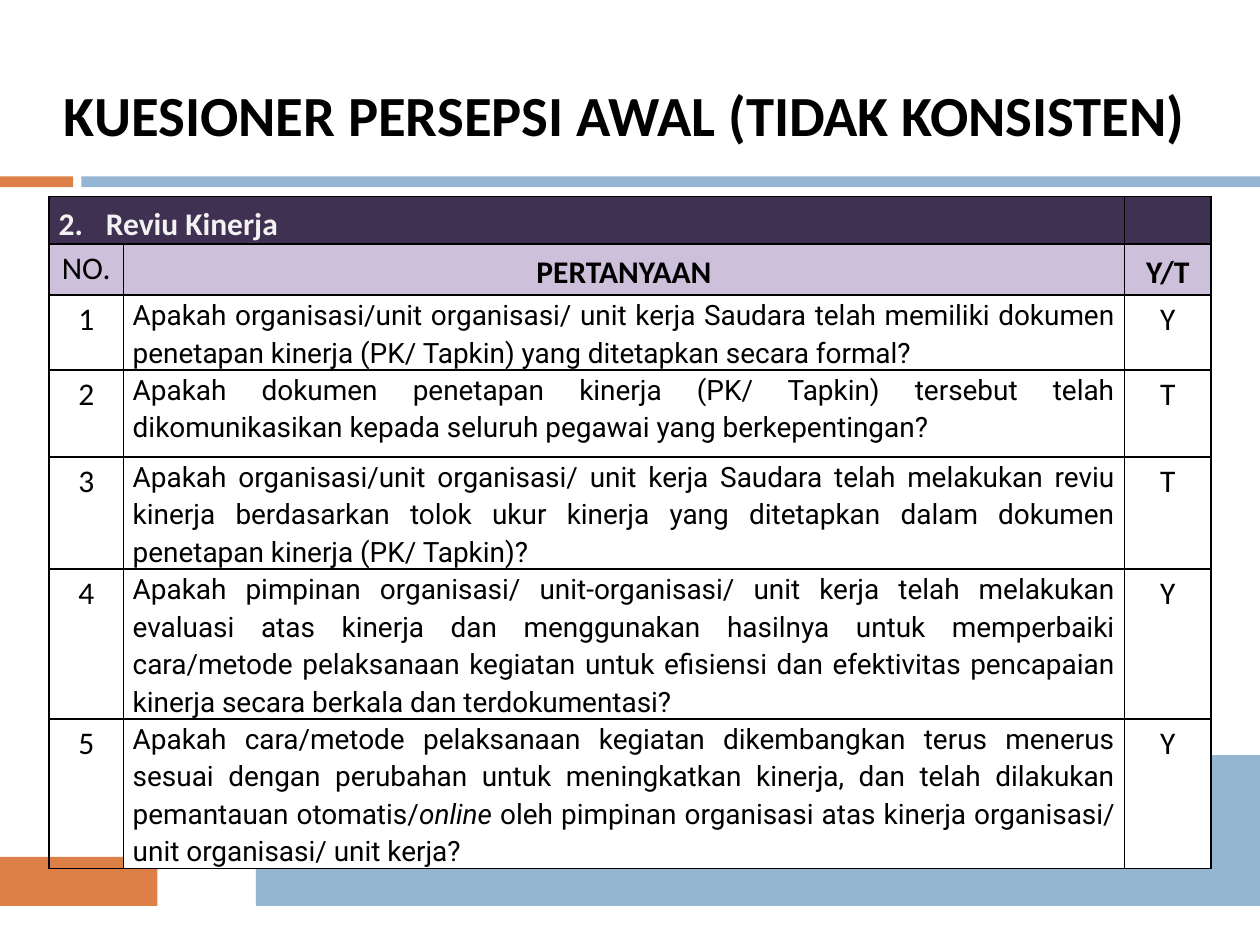
from dataclasses import dataclass
from lxml.etree import SubElement
from pptx import Presentation
from pptx.dml.color import RGBColor
from pptx.enum.shapes import MSO_SHAPE
from pptx.enum.text import MSO_ANCHOR, PP_ALIGN
from pptx.oxml.ns import qn
from pptx.util import Pt


@dataclass(frozen=True)
class Theme:
    orange: str = "DD8047"
    blue: str = "94B6D2"
    white: str = "FFFFFF"
    black: str = "000000"
    section: str = "3F3151"
    section_text: str = "F2F2F2"
    header: str = "CCC0DA"
    heading_font: str = "Calibri"
    body_font: str = "Roboto"
    title_size: float = 32.4
    label_size: float = 18
    body_size: float = 16


theme = Theme()


def paint(shape, color):
    shape.shadow.inherit = False
    shape.fill.solid()
    shape.fill.fore_color.rgb = RGBColor.from_string(color)
    shape.line.fill.background()


def fill_cell(cell, parts, align, fill=None, anchor=MSO_ANCHOR.TOP,
              font=theme.heading_font, size=theme.label_size, color=theme.black, bold=False):
    cell.margin_left = cell.margin_right = Pt(5.4)
    cell.margin_top = cell.margin_bottom = Pt(0)
    cell.vertical_anchor = anchor
    properties = cell._tc.get_or_add_tcPr()
    for side in ("lnL", "lnR", "lnT", "lnB"):
        border = SubElement(properties, qn(f"a:{side}"), w=str(Pt(1)))
        border_fill = SubElement(border, qn("a:solidFill"))
        SubElement(border_fill, qn("a:srgbClr"), val=theme.black)
    if fill:
        cell.fill.solid()
        cell.fill.fore_color.rgb = RGBColor.from_string(fill)
    else:
        cell.fill.background()
    para = cell.text_frame.paragraphs[0]
    para.alignment = align
    para.line_spacing = 1.15
    for index, part in enumerate(parts):
        span = para.add_run()
        span.text = part
        span.font.name = font
        span.font.size = Pt(size)
        span.font.bold = bold
        span.font.italic = index % 2 == 1
        span.font.color.rgb = RGBColor.from_string(color)


deck = Presentation()
deck.slide_width = Pt(720)
deck.slide_height = Pt(540)
page = deck.slides.add_slide(deck.slide_layouts[5])

bands = [
    (0, 100.8, 41.8, 6.2, theme.orange),
    (46.5, 100.8, 673.5, 6.2, theme.blue),
    (146.2, 489.6, 573.8, 28.1, theme.blue),
    (0, 489.6, 90, 28.1, theme.orange),
]
for left, top, width, height, color in bands:
    band = page.shapes.add_shape(MSO_SHAPE.RECTANGLE, Pt(left), Pt(top), Pt(width), Pt(height))
    paint(band, color)

skyline_points = [
    (5.55, 6.85), (5.55, 6.66), (5.67, 6.65), (5.68, 6.75), (5.75, 6.75), (5.75, 6.57),
    (5.82, 6.54), (5.97, 6.54), (5.98, 6.6), (6.05, 6.58), (6.05, 6.65), (6.44, 6.65),
    (6.44, 6.31), (6.63, 6.25), (6.63, 6.75), (6.71, 6.74), (6.71, 6.61), (6.87, 6.56),
    (7, 6.55), (7, 6.82), (7.14, 6.83), (7.14, 6.04), (7.5, 6.04), (7.58, 6.16),
    (7.58, 6.43), (7.81, 6.43), (7.81, 6.55), (8.2, 6.55), (8.19, 6.44), (8.49, 6.44),
    (8.49, 6.77), (8.57, 6.76), (8.64, 6.66), (8.66, 6.48), (8.87, 6.48), (8.87, 6.81),
    (8.97, 6.81), (9, 5.8), (9.53, 5.8), (9.78, 5.98), (9.8, 6.92), (5.55, 6.94),
]
builder = page.shapes.build_freeform(*skyline_points[0], scale=Pt(72))
builder.add_line_segments(skyline_points[1:], close=True)
skyline = builder.convert_to_shape()
paint(skyline, theme.blue)
skyline.line.color.rgb = RGBColor.from_string(theme.blue)
skyline.line.width = Pt(0.79)

windows = [(524.9, 439.9, 3.6), (524.9, 452.2, 3.6), (524.9, 464.4, 3.6), (677.5, 429.8, 3.6),
           (572.4, 454.3, 5.8), (666, 429.8, 3.6), (677.5, 440.6, 3.6)]
for left, top, height in windows:
    window = page.shapes.add_shape(MSO_SHAPE.RECTANGLE, Pt(left), Pt(top), Pt(5.8), Pt(height))
    paint(window, theme.white)

title = page.shapes.title
title.element.getparent().append(title.element)
title.left, title.top, title.width, title.height = Pt(1.4), Pt(25.9), Pt(718.6), Pt(77.8)
title.text_frame.text = "KUESIONER PERSEPSI AWAL (TIDAK KONSISTEN) "
title.text_frame.vertical_anchor = MSO_ANCHOR.MIDDLE
title_para = title.text_frame.paragraphs[0]
title_para.alignment = PP_ALIGN.CENTER
title_font = title_para.runs[0].font
title_font.name = theme.heading_font
title_font.size = Pt(theme.title_size)
title_font.bold = True
title_font.color.rgb = RGBColor.from_string(theme.black)

questions = [
    (["Apakah organisasi/unit organisasi/ unit kerja Saudara telah memiliki dokumen penetapan "
      "kinerja (PK/ Tapkin) yang ditetapkan secara formal?"], "Y"),
    (["Apakah dokumen penetapan kinerja (PK/ Tapkin) tersebut telah dikomunikasikan kepada "
      "seluruh pegawai yang berkepentingan?"], "T"),
    (["Apakah organisasi/unit organisasi/ unit kerja Saudara telah melakukan reviu kinerja "
      "berdasarkan tolok ukur kinerja yang ditetapkan dalam dokumen penetapan kinerja "
      "(PK/ Tapkin)?"], "T"),
    (["Apakah pimpinan organisasi/ unit-organisasi/ unit kerja telah melakukan evaluasi atas "
      "kinerja dan menggunakan hasilnya untuk memperbaiki cara/metode pelaksanaan kegiatan "
      "untuk efisiensi dan efektivitas pencapaian kinerja secara berkala dan "
      "terdokumentasi?"], "Y"),
    (["Apakah cara/metode pelaksanaan kegiatan dikembangkan terus menerus sesuai dengan "
      "perubahan untuk meningkatkan kinerja, dan telah dilakukan pemantauan otomatis/",
      "online",
      " oleh pimpinan organisasi atas kinerja organisasi/ unit organisasi/ unit kerja?"], "Y"),
]
column_widths = [42.4, 572.2, 49.4]
row_heights = [27, 29.2, 42.8, 49.7, 64.2, 85.5, 85.5]
table = page.shapes.add_table(len(row_heights), len(column_widths), Pt(28.1), Pt(112.4),
                              Pt(sum(column_widths)), Pt(sum(row_heights))).table
table.first_row = False
table.horz_banding = False
for column, width in zip(table.columns, column_widths):
    column.width = Pt(width)
for row, height in zip(table.rows, row_heights):
    row.height = Pt(height)

table.cell(0, 0).merge(table.cell(0, 1))
for column, parts in enumerate((["2.\tReviu Kinerja"], [], [])):
    fill_cell(table.cell(0, column), parts, PP_ALIGN.LEFT, theme.section, MSO_ANCHOR.BOTTOM,
              color=theme.section_text, bold=True)
section_properties = table.cell(0, 0).text_frame.paragraphs[0]._p.get_or_add_pPr()
section_properties.set("marL", str(Pt(27)))
section_properties.set("indent", str(-Pt(27)))

headings = [("NO.", MSO_ANCHOR.TOP, False), ("PERTANYAAN", MSO_ANCHOR.MIDDLE, True),
            ("Y/T", MSO_ANCHOR.MIDDLE, True)]
for column, (heading, anchor, bold) in enumerate(headings):
    fill_cell(table.cell(1, column), [heading], PP_ALIGN.CENTER, theme.header, anchor, bold=bold)

for number, (question, answer) in enumerate(questions, 1):
    row = number + 1
    fill_cell(table.cell(row, 0), [str(number)], PP_ALIGN.CENTER)
    fill_cell(table.cell(row, 1), question, PP_ALIGN.JUSTIFY, theme.white,
              font=theme.body_font, size=theme.body_size)
    fill_cell(table.cell(row, 2), [answer], PP_ALIGN.CENTER, theme.white)

deck.save("out.pptx")
